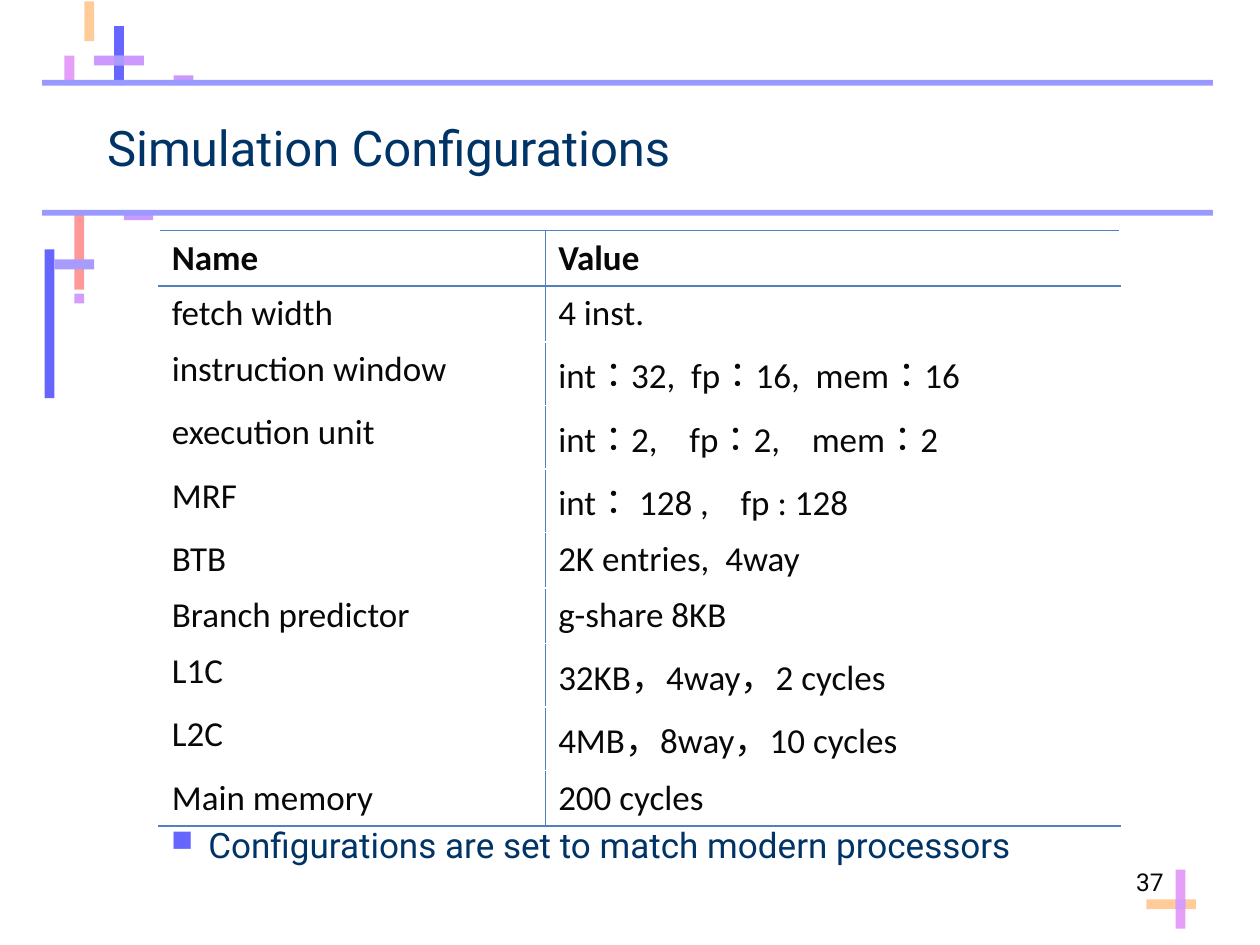
import pptx
import pptx.dml.color
import pptx.enum.lang
import pptx.enum.shapes
import pptx.enum.text
import pptx.oxml
import pptx.oxml.ns
import pptx.util

Cm = pptx.util.Cm
Pt = pptx.util.Pt
Align = pptx.enum.text.PP_ALIGN
Anchor = pptx.enum.text.MSO_ANCHOR

NAVY, INK, BLUE, WHITE = "003366", "080808", "4F81BD", "FFFFFF"

MARKS = [
    (2.3, 0.53, 0.2, 1.19, "6666FF"),
    (3.5, 1.52, 0.4, 0.2, "CC99FF"),
    (1.9, 1.12, 1, 0.2, "CC99FF"),
    (2.3, 1.12, 0.2, 0.2, "A99BFD"),
    (1.7, 0.03, 0.2, 0.8, "FFCC99"),
    (1.3, 1.12, 0.2, 0.6, "E69FF9"),
    (2.5, 4.24, 0.59, 0.2, "CC99FF"),
    (1.5, 4.24, 0.2, 1.6, "FF9999"),
    (1.1, 5.23, 0.8, 0.2, "A99BFD"),
    (1.5, 5.92, 0.2, 0.2, "D39DFB"),
    (0.9, 5.03, 0.2, 3, "6666FF"),
    (23.11, 18.13, 1, 0.2, "FFCC99"),
    (23.7, 17.53, 0.2, 1.19, "E69FF9"),
    (23.7, 18.13, 0.2, 0.2, "D39DFB"),
    (0.85, 4.23, 23.6, 0.12, "9999FF"),
    (0.85, 1.61, 23.6, 0.12, "9999FF"),
]

ROWS = [
    ("Name", "Value"),
    ("fetch width", "4 inst."),
    ("instruction window", "int：32,  fp：16,  mem：16"),
    ("execution unit", "int：2,    fp：2,    mem：2"),
    ("MRF", "int： 128 ,    fp : 128"),
    ("BTB", "2K entries,  4way"),
    ("Branch predictor", "g-share 8KB"),
    ("L1C", "32KB，4way，2 cycles"),
    ("L2C", "4MB，8way，10 cycles"),
    ("Main memory", "200 cycles"),
]


def paint(fill, tint):
    fill.solid()
    fill.fore_color.rgb = pptx.dml.color.RGBColor.from_string(tint)


def style(para, font, size, tint, bold=False):
    for run in para.runs:
        run.font.name = font
        run.font.size = Pt(size)
        run.font.bold = bold
        run.font.language_id = pptx.enum.lang.MSO_LANGUAGE_ID.JAPANESE
        paint(run.font.fill, tint)


def add_mark(slide, left, top, width, height, tint):
    kind = pptx.enum.shapes.MSO_SHAPE.RECTANGLE
    mark = slide.shapes.add_shape(kind, Cm(left), Cm(top), Cm(width), Cm(height))
    mark.shadow.inherit = False
    paint(mark.fill, tint)
    mark.line.fill.background()


def add_text(slide, text, place, size, tint, anchor=Anchor.MIDDLE, align=Align.LEFT):
    box = slide.shapes.add_textbox(*map(Cm, place))
    frame = box.text_frame
    frame.word_wrap = True
    frame.vertical_anchor = anchor
    frame.text = text
    para = frame.paragraphs[0]
    para.alignment = align
    style(para, "Roboto", size, tint)
    return para


def add_bullet(para, tint):
    props = para._p.get_or_add_pPr()
    props.set("marL", str(Cm(0.75)))
    props.set("indent", str(Cm(-0.75)))
    space = pptx.oxml.ns.nsdecls("a")
    for part in (
        f'<a:buClr {space}><a:srgbClr val="{tint}"/></a:buClr>',
        f'<a:buSzPct {space} val="85000"/>',
        f'<a:buChar {space} char="■"/>',
    ):
        props.append(pptx.oxml.parse_xml(part))


def add_edge(cell, side, tint):
    space = pptx.oxml.ns.nsdecls("a")
    cell._tc.get_or_add_tcPr().append(pptx.oxml.parse_xml(
        f'<a:ln{side} {space} w="{Pt(1)}"><a:solidFill>'
        f'<a:srgbClr val="{tint}"/></a:solidFill></a:ln{side}>'))


def add_grid(slide):
    last = len(ROWS) - 1
    place = map(Cm, (3.21, 4.65, 19.37, 12))
    grid = slide.shapes.add_table(len(ROWS), 2, *place).table
    grid.horz_banding = False
    for column, width in zip(grid.columns, (7.79, 11.58)):
        column.width = Cm(width)
    for row, texts in enumerate(ROWS):
        wide = any(sign in texts[1] for sign in "：，")
        grid.rows[row].height = Cm(1.28 if wide else 1.12)
        for col, text in enumerate(texts):
            cell = grid.cell(row, col)
            cell.text = text
            style(cell.text_frame.paragraphs[0], "Calibri", 20, INK, row == 0)
            add_edge(cell, "L" if col else "R", BLUE)
            add_edge(cell, "T", BLUE if row < 2 else WHITE)
            add_edge(cell, "B", BLUE if row in (0, last) else WHITE)
            paint(cell.fill, WHITE)


def main():
    deck = pptx.Presentation()
    deck.slide_width, deck.slide_height = Cm(25.4), Cm(19.05)
    slide = deck.slides.add_slide(deck.slide_layouts[6])
    for mark in MARKS:
        add_mark(slide, *mark)
    add_text(slide, "Simulation Configurations", (1.91, 1.7, 21.59, 2.54), 28, NAVY)
    note = add_text(slide, "Configurations are set to match modern processors",
                    (3.2, 15.77, 20.4, 2.5), 20, NAVY)
    add_bullet(note, "6666FF")
    add_text(slide, "37", (20.12, 17.35, 3.59, 1.12), 14, INK, Anchor.TOP, Align.RIGHT)
    add_grid(slide)
    deck.save("out.pptx")


if __name__ == "__main__":
    main()
